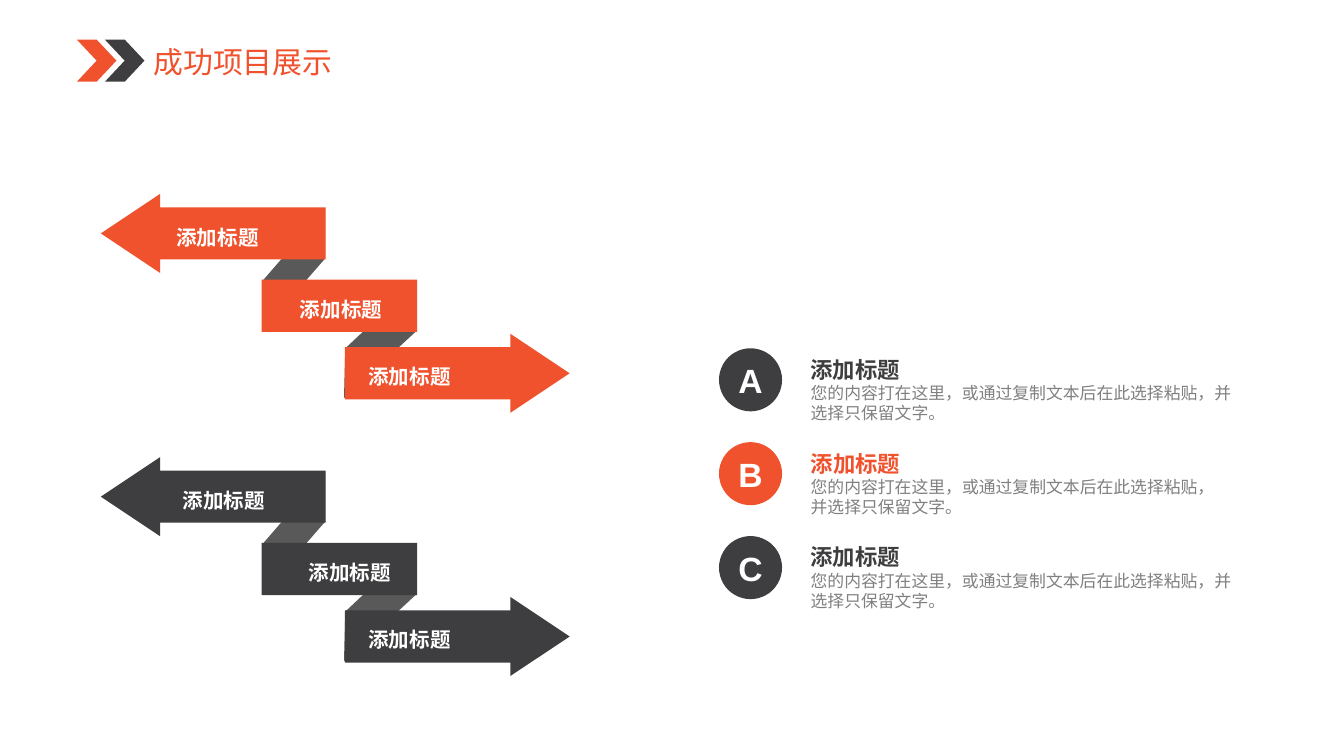
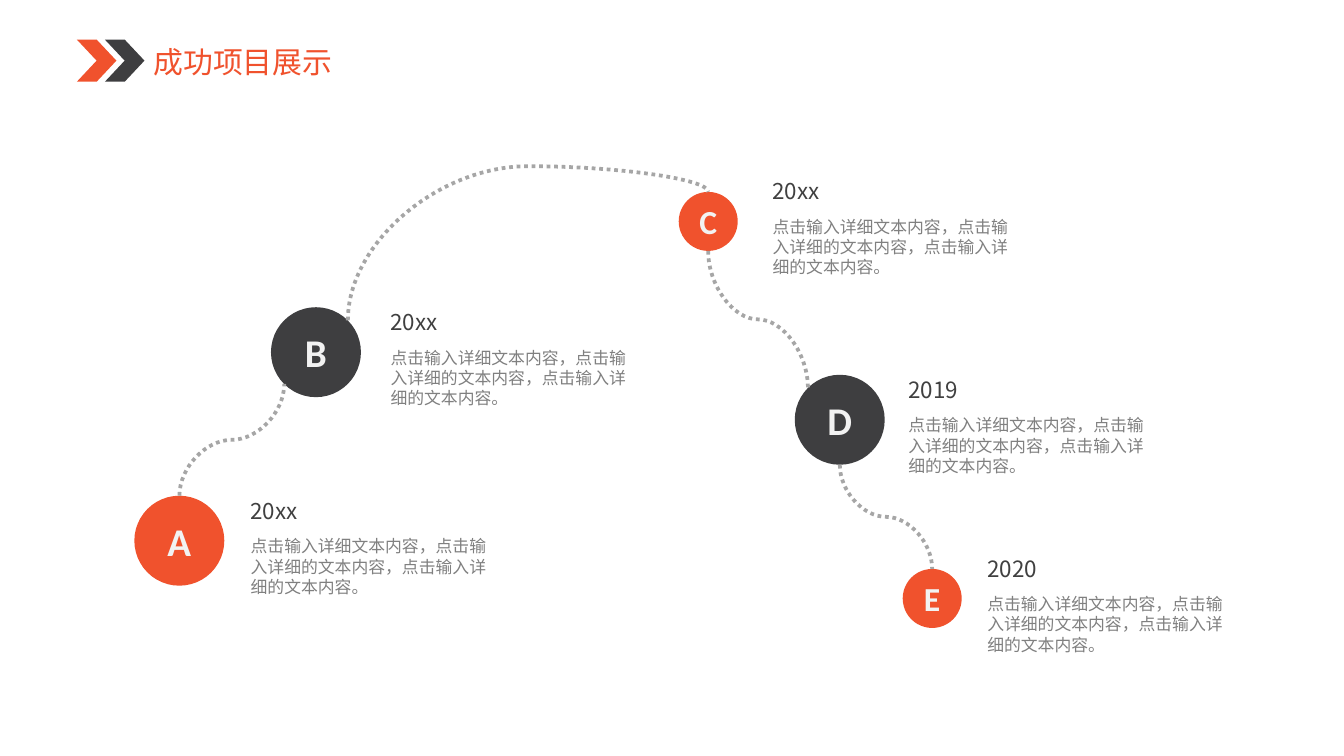
from dataclasses import dataclass
from math import cos, radians, sin

from lxml.etree import SubElement
from pptx import Presentation
from pptx.dml.color import RGBColor
from pptx.enum.dml import MSO_LINE
from pptx.enum.shapes import MSO_CONNECTOR, MSO_SHAPE
from pptx.enum.text import MSO_ANCHOR, MSO_AUTO_SIZE, PP_ALIGN
from pptx.oxml.ns import qn
from pptx.util import Pt


@dataclass(frozen=True)
class Theme:
    orange: str = "F0522D"
    dark: str = "3E3E40"
    fold: str = "595959"
    body: str = "808080"
    year: str = "404040"
    curve: str = "A6A6A6"
    white: str = "FFFFFF"
    pale: str = "F2F2F2"
    chinese_font: str = "Noto Sans CJK SC"
    label_font: str = "Arial"
    letter_font: str = "Calibri"
    title_size: float = 16
    letter_size: float = 18
    large_letter_size: float = 21
    heading_size: float = 12
    label_size: float = 11
    body_size: float = 9
    line_height: float = 1.2
    curve_width: float = 2


THEME = Theme()
TITLE = "成功项目展示"
LABEL = "添加标题"
ITEM_BODY = "您的内容打在这里，或通过复制文本后在此选择粘贴，并选择只保留文字。"
MILESTONE_BODY = "点击输入详细文本内容，点击输入详细的文本内容，点击输入详细的文本内容。"
TIGHT_INSETS = (5.2, 2.6)
WIDE_INSETS = (7.2, 3.6)


def points(*lengths):
    return [Pt(length) for length in lengths]


def add_line(frame, text, *, size, color, font=THEME.chinese_font, bold=False,
             align=PP_ALIGN.LEFT):
    paragraph = frame.paragraphs[0]
    if paragraph.runs:
        paragraph = frame.add_paragraph()
    paragraph.alignment = align
    paragraph.line_spacing = Pt(size * THEME.line_height)
    run = paragraph.add_run()
    run.text = text
    run.font.name = font
    run.font.size = Pt(size)
    run.font.bold = bold
    run.font.color.rgb = RGBColor.from_string(color)
    east_asian = SubElement(run.font._element, qn("a:ea"))
    east_asian.set("typeface", THEME.chinese_font)


def set_frame(frame, *, insets, wrap=True, anchor=MSO_ANCHOR.TOP, grow=True):
    frame.margin_left = frame.margin_right = Pt(insets[0])
    frame.margin_top = frame.margin_bottom = Pt(insets[1])
    frame.word_wrap = wrap
    frame.vertical_anchor = anchor
    frame.auto_size = MSO_AUTO_SIZE.SHAPE_TO_FIT_TEXT if grow else MSO_AUTO_SIZE.NONE


def add_text_box(slide, box, *, insets, wrap=True):
    frame = slide.shapes.add_textbox(*points(*box)).text_frame
    set_frame(frame, insets=insets, wrap=wrap)
    return frame


def paint(shape, color):
    shape.shadow.inherit = False
    shape.fill.solid()
    shape.fill.fore_color.rgb = RGBColor.from_string(color)
    shape.line.fill.background()


def add_filled_shape(slide, kind, box, color, adjustments=()):
    shape = slide.shapes.add_shape(kind, *points(*box))
    paint(shape, color)
    for index, value in enumerate(adjustments):
        shape.adjustments[index] = value
    return shape


def add_fold(slide, corners):
    builder = slide.shapes.build_freeform(*points(*corners[0]))
    builder.add_line_segments([points(*corner) for corner in corners[1:]], close=True)
    paint(builder.convert_to_shape(), THEME.fold)


def add_letter_circle(slide, box, letter, *, fill, size, color, font):
    circle = add_filled_shape(slide, MSO_SHAPE.OVAL, box, fill)
    set_frame(circle.text_frame, insets=TIGHT_INSETS, anchor=MSO_ANCHOR.MIDDLE, grow=False)
    add_line(circle.text_frame, letter, size=size, color=color, font=font, bold=True,
             align=PP_ALIGN.CENTER)


def add_curve(slide, start, end, bend=0.5):
    run, rise = end[0] - start[0], end[1] - start[1]
    turn = 270 if rise > 0 else 90
    along, across = (-rise, run) if rise > 0 else (rise, -run)
    middle_x, middle_y = (start[0] + end[0]) / 2, (start[1] + end[1]) / 2
    connector = slide.shapes.add_connector(
        MSO_CONNECTOR.CURVE,
        *points(middle_x - along / 2, middle_y - across / 2,
                middle_x + along / 2, middle_y + across / 2))
    connector.line.color.rgb = RGBColor.from_string(THEME.curve)
    connector.line.width = Pt(THEME.curve_width)
    connector.line.dash_style = MSO_LINE.ROUND_DOT
    properties = connector._element.spPr
    SubElement(properties, qn("a:effectLst"))
    properties.find(qn("a:xfrm")).set("rot", str(turn * 60000))
    geometry = properties.find(qn("a:prstGeom"))
    guide = SubElement(geometry.find(qn("a:avLst")), qn("a:gd"))
    guide.set("name", "adj1")
    guide.set("fmla", f"val {round(bend * 100000)}")


def add_header(slide, left, top):
    title = slide.shapes.title
    title.left, title.top, title.width, title.height = points(left + 35.3, top - 0.7, 108, 25.2)
    set_frame(title.text_frame, insets=(5.8, 2.9), wrap=False)
    add_line(title.text_frame, TITLE, size=THEME.title_size, color=THEME.orange)
    for index, color in enumerate((THEME.orange, THEME.dark)):
        add_filled_shape(slide, MSO_SHAPE.CHEVRON, (left + index * 15, top, 21.2, 22.6), color)


def add_ribbon(slide, left, top, color, label_lefts):
    folds = (
        ((87.1, 46.1), (120.2, 7.9), (120.2, 34.6), (86.4, 73.4)),
        ((131, 82.8), (169.2, 46.8), (169.2, 73.4), (130.3, 109.4)),
    )
    for corners in folds:
        add_fold(slide, [(left + x, top + y) for x, y in corners])
    arrow = (0.658, 0.75)
    bands = (
        (MSO_SHAPE.LEFT_ARROW, (0, 0, 120.4, 42.4), arrow),
        (MSO_SHAPE.RECTANGLE, (86.2, 46, 83.3, 28), ()),
        (MSO_SHAPE.RIGHT_ARROW, (130.8, 74.9, 120.4, 42.4), arrow),
    )
    for kind, (x, y, width, height), adjustments in bands:
        add_filled_shape(slide, kind, (left + x, top + y, width, height), color, adjustments)
    for x, y in zip(label_lefts, (14.2, 52.6, 88.6)):
        frame = add_text_box(slide, (left + x, top + y, 55.4, 18.7),
                             insets=TIGHT_INSETS, wrap=False)
        add_line(frame, LABEL, size=THEME.label_size, color=THEME.white,
                 font=THEME.label_font, bold=True)


def add_item(slide, left, top, letter, color, text_width):
    add_letter_circle(slide, (left, top, 33.8, 33.8), letter, fill=color,
                      size=THEME.letter_size, color=THEME.white, font=THEME.label_font)
    frame = add_text_box(slide, (left + 43.9, top + 1.4, text_width, 41.8), insets=TIGHT_INSETS)
    add_line(frame, LABEL, size=THEME.heading_size, color=color, bold=True)
    add_line(frame, ITEM_BODY, size=THEME.body_size, color=THEME.body)


def add_milestone_text(slide, left, top, year):
    heading = add_text_box(slide, (left, top, 42, 21.6), insets=WIDE_INSETS, wrap=False)
    add_line(heading, year, size=THEME.heading_size, color=THEME.year)
    body = add_text_box(slide, (left, top + 20.9, 141.2, 40), insets=WIDE_INSETS)
    add_line(body, MILESTONE_BODY, size=THEME.body_size, color=THEME.body)


def rim_point(circle, degrees):
    left, top, diameter = circle
    radius = diameter / 2
    angle = radians(degrees)
    return left + radius + radius * cos(angle), top + radius + radius * sin(angle)


def build_ribbon_slide(slide):
    add_header(slide, 41.2, 21.2)
    ribbons = (
        (THEME.orange, (35.3, 101.5, 138.2)),
        (THEME.dark, (38.6, 106.3, 138.2)),
    )
    for index, (color, label_lefts) in enumerate(ribbons):
        add_ribbon(slide, 54, 103.9 + index * 141, color, label_lefts)
    items = (("A", THEME.dark, 239.8), ("B", THEME.orange, 234.9), ("C", THEME.dark, 239.8))
    for index, (letter, color, text_width) in enumerate(items):
        add_item(slide, 385.2, 186.6 + index * 50.3, letter, color, text_width)


def build_timeline_slide(slide):
    add_header(slide, 41.2, 21.2)
    large, small = 48.2, 31.6
    milestones = {
        "A": ((72, 265.6, large), THEME.orange, (127.2, 262.8), "20xx"),
        "B": ((145.2, 164.6, large), THEME.dark, (202.1, 161.8), "20xx"),
        "C": ((363.6, 102.8, small), THEME.orange, (406.8, 91.5), "20xx"),
        "D": ((425.8, 200.8, large), THEME.dark, (479.5, 198), "2019"),
        "E": ((483.6, 304.8, small), THEME.orange, (521.8, 293.8), "2020"),
    }
    for letter, (circle, color, text_origin, year) in milestones.items():
        left, top, diameter = circle
        size = THEME.large_letter_size if diameter == large else THEME.letter_size
        add_letter_circle(slide, (left, top, diameter, diameter), letter, fill=color,
                          size=size, color=THEME.pale, font=THEME.letter_font)
        add_milestone_text(slide, *text_origin, year)
    curves = (
        ("A", 270, "B", 135, 0.5),
        ("C", 90, "D", 225, 0.5),
        ("D", 90, "E", 270, 0.5),
        ("B", 315, "C", 270, 1.2),
    )
    for start, start_angle, end, end_angle, bend in curves:
        add_curve(slide, rim_point(milestones[start][0], start_angle),
                  rim_point(milestones[end][0], end_angle), bend)


def main():
    presentation = Presentation()
    presentation.slide_width, presentation.slide_height = points(720, 405)
    title_only = presentation.slide_layouts[5]
    for build in (build_ribbon_slide, build_timeline_slide):
        build(presentation.slides.add_slide(title_only))
    presentation.save("out.pptx")


if __name__ == "__main__":
    main()
